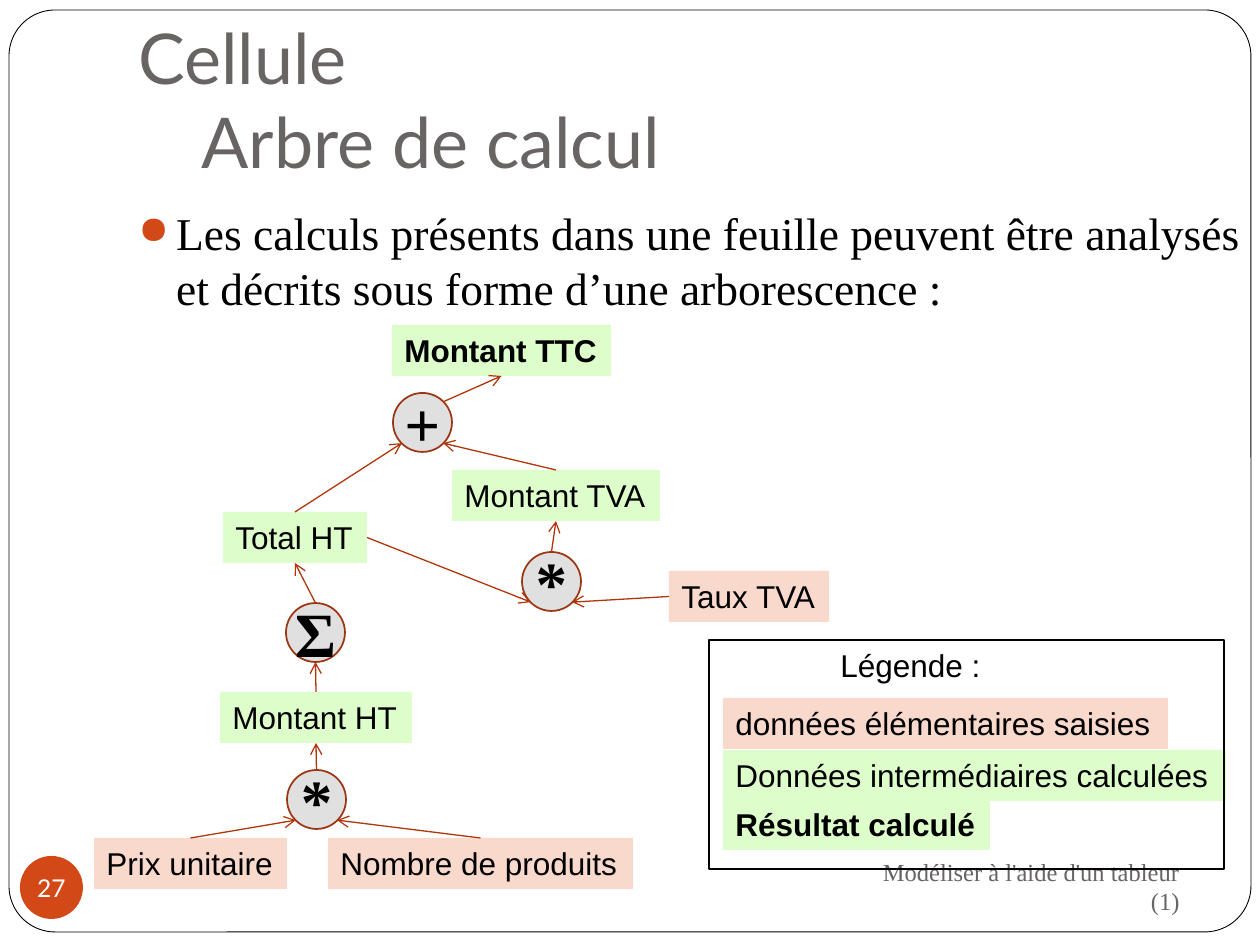
import pptx
import pptx.util
import pptx.dml.color
import pptx.enum.shapes
import pptx.enum.text
import pptx.oxml
import pptx.oxml.ns

RGBColor = pptx.dml.color.RGBColor
MSO_SHAPE = pptx.enum.shapes.MSO_SHAPE
ANCHOR = pptx.enum.text.MSO_ANCHOR
ALIGN = pptx.enum.text.PP_ALIGN
AUTO_SIZE = pptx.enum.text.MSO_AUTO_SIZE
Pt = pptx.util.Pt

BLACK = RGBColor(0x00, 0x00, 0x00)
WHITE = RGBColor(0xFF, 0xFF, 0xFF)
GREY = RGBColor(0x69, 0x64, 0x64)
ORANGE = RGBColor(0xD3, 0x48, 0x17)
GREEN = RGBColor(0xDD, 0xFE, 0xCA)
PINK = RGBColor(0xFA, 0xD9, 0xCD)
CIRCLE_FILL = RGBColor(0xE1, 0xE0, 0xE0)
CIRCLE_LINE = RGBColor(0x9C, 0x35, 0x11)
ARROW = RGBColor(0xB1, 0x36, 0x0B)

SCALE = 914400 / 126
LABEL_HEIGHT = 51
DIAMETER = 59

TITLE = "Cellule\v\tArbre de calcul"
BODY = "Les calculs présents dans une feuille peuvent être analysés et décrits sous forme d’une arborescence :"
FOOTER = "Modéliser à l'aide d'un tableur (1)"
PAGE = "27"

LABELS = [
    ("Montant TTC", 392, 325, 219, GREEN, True),
    ("Total HT", 223, 512, 144, GREEN, False),
    ("Montant TVA", 452, 470, 208, GREEN, False),
    ("Taux TVA", 669, 571, 160, PINK, False),
    ("Prix unitaire", 94, 838, 193, PINK, False),
    ("Nombre de produits", 328, 838, 305, PINK, False),
    ("Montant HT", 220, 692, 192, GREEN, False),
    ("données élémentaires saisies", 723, 698, 445, PINK, False),
    ("Données intermédiaires calculées", 723, 750, 503, GREEN, False),
    ("Résultat calculé", 723, 799, 267, GREEN, True),
    ("Légende :", 828, 640, 166, None, False),
]
OPERATORS = [
    ("product", "*", 287, 770),
    ("sum", "Σ", 286, 603),
    ("tax", "*", 522, 552),
    ("addition", "+", 393, 393),
]
LINKS = [
    ("Prix unitaire", "top", "product", "bottom left"),
    ("Nombre de produits", "top", "product", "bottom right"),
    ("product", "top", "Montant HT", "bottom"),
    ("Montant HT", "top", "sum", "bottom"),
    ("sum", "top", "Total HT", "bottom"),
    ("Total HT", "right", "tax", "bottom left"),
    ("Taux TVA", "left", "tax", "bottom right"),
    ("tax", "top", "Montant TVA", "bottom"),
    ("Total HT", "top", "addition", "bottom left"),
    ("Montant TVA", "top", "addition", "bottom right"),
    ("addition", "top right", "Montant TTC", "bottom"),
]
SIDES = {"top": 0, "left": 1, "bottom": 2, "right": 3}
SITES = {
    "top": (0.5, 0), "left": (0, 0.5), "bottom": (0.5, 1), "right": (1, 0.5),
    "top right": (0.85, 0.15), "bottom left": (0.15, 0.85), "bottom right": (0.85, 0.85),
}


def px(*lengths):
    return [round(length * SCALE) for length in lengths]


def add_shape(slide, kind, box, fill=None, line=None, width=1):
    shape = slide.shapes.add_shape(kind, *px(*box))
    shape.shadow.inherit = False
    if fill is None:
        shape.fill.background()
    else:
        shape.fill.solid()
        shape.fill.fore_color.rgb = fill
    if line is None:
        shape.line.fill.background()
    else:
        shape.line.color.rgb = line
        shape.line.width = Pt(width)
    return shape


def write(shape, text, font, size, color, bold=False, align=ALIGN.LEFT,
          anchor=ANCHOR.TOP, wrap=True, margin=None):
    frame = shape.text_frame
    frame.word_wrap = wrap
    frame.vertical_anchor = anchor
    if margin is not None:
        frame.margin_left = frame.margin_right = margin
        frame.margin_top = frame.margin_bottom = margin
    paragraph = frame.paragraphs[0]
    paragraph.text = text
    paragraph.alignment = align
    paragraph.font.name = font
    paragraph.font.size = Pt(size)
    paragraph.font.bold = bold
    paragraph.font.color.rgb = color
    return paragraph


def add_xml(parent, name, **attributes):
    element = pptx.oxml.parse_xml(f"<{name} {pptx.oxml.ns.nsdecls('a')}/>")
    for key, value in attributes.items():
        element.set(key, value)
    parent.append(element)
    return element


def add_text(slide, box, *arguments, **options):
    return write(slide.shapes.add_textbox(*px(*box)), *arguments, **options)


def add_bullet(paragraph):
    properties = paragraph._p.get_or_add_pPr()
    properties.set("marL", str(pptx.util.Inches(0.3)))
    properties.set("indent", str(-pptx.util.Inches(0.3)))
    paragraph.space_before = Pt(5.8)
    following = properties.find(pptx.oxml.ns.qn("a:defRPr"))
    color = add_xml(properties, "a:buClr")
    add_xml(color, "a:srgbClr", val=str(ORANGE))
    add_xml(properties, "a:buSzPct", val="85000")
    add_xml(properties, "a:buChar", char="●")
    properties.append(following)


def site_point(shape, site):
    across, down = SITES[site]
    return round(shape.left + across * shape.width), round(shape.top + down * shape.height)


def add_link(slide, source, start, target, end):
    connector = slide.shapes.add_connector(
        pptx.enum.shapes.MSO_CONNECTOR.STRAIGHT,
        *site_point(source, start), *site_point(target, end))
    if source.auto_shape_type == MSO_SHAPE.RECTANGLE:
        connector.begin_connect(source, SIDES[start])
    if target.auto_shape_type == MSO_SHAPE.RECTANGLE:
        connector.end_connect(target, SIDES[end])
    connector.line.color.rgb = ARROW
    connector.line.width = Pt(0.75)
    add_xml(connector.line._get_or_add_ln(), "a:tailEnd", type="arrow")
    add_xml(connector._element.spPr, "a:effectLst")


def main():
    presentation = pptx.Presentation()
    presentation.slide_width, presentation.slide_height = px(1260, 945)
    slide = presentation.slides.add_slide(presentation.slide_layouts[6])

    frame = add_shape(slide, MSO_SHAPE.ROUNDED_RECTANGLE, (9, 10, 1242, 922), WHITE, BLACK, 0.5)
    frame.adjustments[0] = 0.05
    title = slide.shapes.add_textbox(*px(126, 38, 1071, 157))
    write(title, TITLE, "Lato", 40, GREY, anchor=ANCHOR.BOTTOM)
    title.text_frame.margin_bottom = pptx.util.Inches(0.1)
    add_bullet(add_text(slide, (126, 199, 1134, 630), BODY, "Times New Roman", 26, BLACK))
    add_text(slide, (851, 853, 341, 66), FOOTER, "Times New Roman", 14, GREY,
             align=ALIGN.RIGHT, anchor=ANCHOR.MIDDLE)
    badge = add_shape(slide, MSO_SHAPE.OVAL, (20, 856, 63, 63), ORANGE)
    write(badge, PAGE, "Lato", 14, WHITE, align=ALIGN.CENTER,
          anchor=ANCHOR.MIDDLE, wrap=False, margin=0)

    nodes = {}
    for text, left, top, width, fill, bold in LABELS:
        box = (left, top, width, LABEL_HEIGHT)
        if fill is None:
            label = slide.shapes.add_textbox(*px(*box))
        else:
            label = add_shape(slide, MSO_SHAPE.RECTANGLE, box, fill)
            nodes[text] = label
        write(label, text, "Arial", 18, BLACK, bold, wrap=False)
        label.text_frame.auto_size = AUTO_SIZE.SHAPE_TO_FIT_TEXT
    for name, symbol, left, top in OPERATORS:
        nodes[name] = add_shape(slide, MSO_SHAPE.OVAL, (left, top, DIAMETER, DIAMETER),
                                CIRCLE_FILL, CIRCLE_LINE)
        write(nodes[name], symbol, "Times New Roman", 36, BLACK, True, ALIGN.CENTER,
              ANCHOR.MIDDLE, margin=0)
    add_shape(slide, MSO_SHAPE.RECTANGLE, (709, 640, 515, 229), line=BLACK)
    for source, start, target, end in LINKS:
        add_link(slide, nodes[source], start, nodes[target], end)

    presentation.save("out.pptx")


if __name__ == "__main__":
    main()
